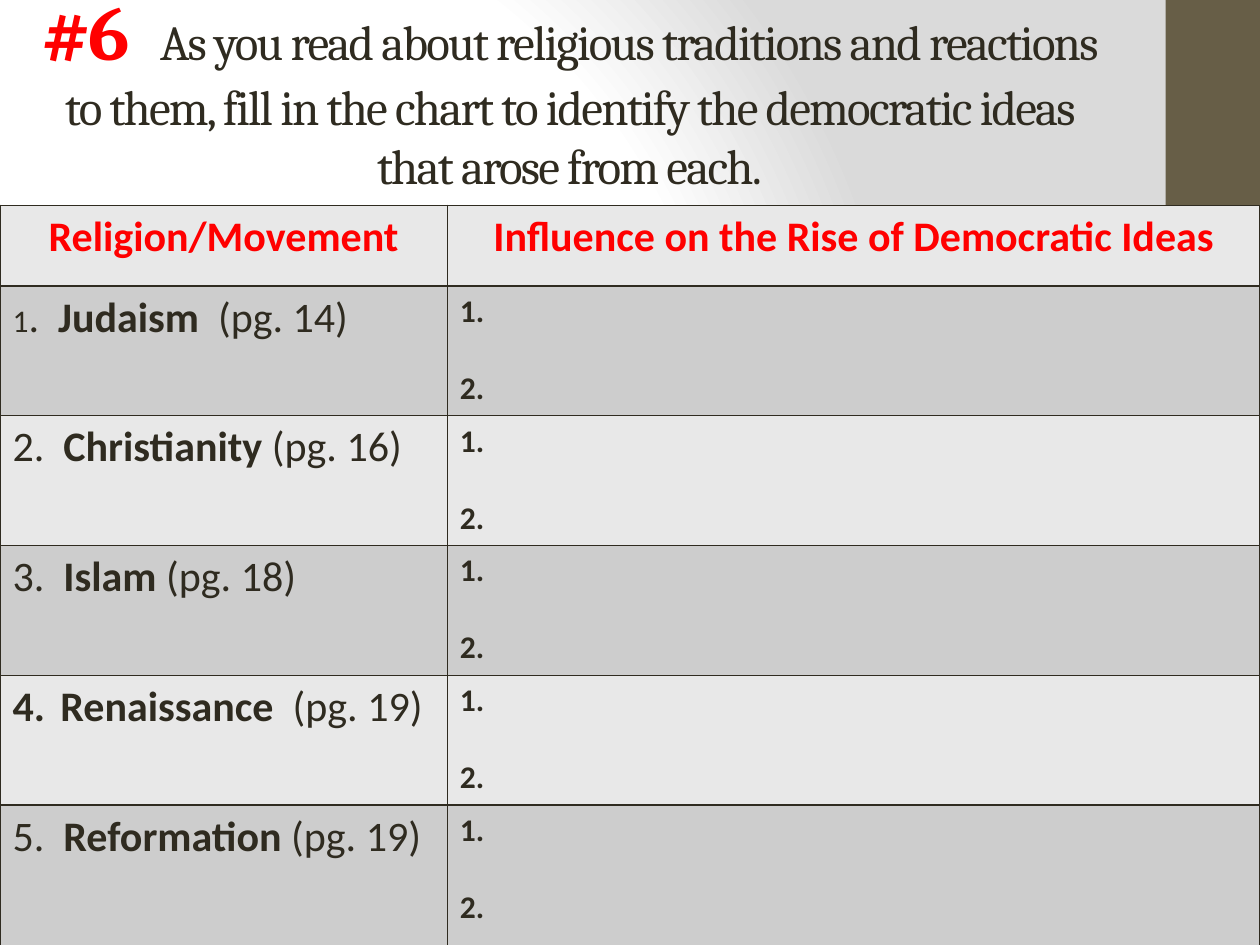
from pptx import Presentation, util as u
from pptx.dml.color import RGBColor
from pptx.enum import shapes, text
from pptx.oxml import parse_xml
from pptx.oxml.ns import nsdecls
from pptx.oxml.xmlchemy import OxmlElement

INK = RGBColor(0x2F, 0x2B, 0x20)
RED = RGBColor(0xFF, 0x00, 0x00)
OLIVE = RGBColor(0x67, 0x5E, 0x47)
LIGHT = RGBColor(0xE8, 0xE8, 0xE8)
DARK = RGBColor(0xCD, 0xCD, 0xCD)
STOPS = [(0, "FFFFFF"), (75, "FFFFFF"), (100, "DADADA")]

BODY = {"name": "Calibri", "size": u.Pt(24), "bold": False}
BOLD = BODY | {"bold": True}
SMALL = BODY | {"size": u.Pt(18)}
SMALL_BOLD = BOLD | {"size": u.Pt(18)}
TITLE = {"name": "Cambria", "size": u.Pt(28), "bold": False}
NUMBER = {"name": "Cambria", "size": u.Pt(44), "bold": True}

HEADINGS = ["Religion/Movement", "Influence on the Rise of Democratic Ideas"]
MOVEMENTS = [
    [("1", SMALL), (".  ", BODY), ("Judaism  ", BOLD), ("(pg. 14)", BODY)],
    [("2.  ", BODY), ("Christianity ", BOLD), ("(pg. 16)", BODY)],
    [("3.  ", BODY), ("Islam ", BOLD), ("(pg. 18)", BODY)],
    [("Renaissance  ", BOLD), ("(pg. 19)", BODY)],
    [("5. ", BODY), (" Reformation ", BOLD), ("(pg. 19)", BODY)],
]
AUTO_NUMBERED = 4
COLUMNS = [3.55, 6.45]
ROWS = [0.64, 1.03, 1.03, 1.03, 1.03, 1.13]


def add_run(p, words, style, color=INK):
    """Append a run with the given font values."""
    r = p.add_run()
    r.text = words
    for key, value in style.items():
        setattr(r.font, key, value)
    r.font.color.rgb = color
    return r


def paint_background(s):
    """Give the slide a circular grey gradient."""
    stops = "".join(
        f'<a:gs pos="{pos * 1000}"><a:srgbClr val="{val}"/></a:gs>' for pos, val in STOPS
    )
    s.element.cSld.insert(0, parse_xml(
        f'<p:bg {nsdecls("p", "a")}><p:bgPr><a:gradFill rotWithShape="1">'
        f'<a:gsLst>{stops}</a:gsLst><a:path path="circle">'
        '<a:fillToRect l="20000" t="50000" r="100000" b="50000"/></a:path>'
        '</a:gradFill><a:effectLst/></p:bgPr></p:bg>'
    ))


def add_sidebar(s, x, y, w, h):
    """Draw the olive band on the right."""
    sp = s.shapes.add_shape(shapes.MSO_SHAPE.RECTANGLE, x, y, w, h)
    sp.shadow.inherit = False
    sp.fill.solid()
    sp.fill.fore_color.rgb = OLIVE
    sp.line.fill.background()


def add_title(s, x, y, w, h):
    """Write the numbered instruction in its box."""
    tf = s.shapes.add_textbox(x, y, w, h).text_frame
    tf.word_wrap = True
    tf.vertical_anchor = text.MSO_ANCHOR.MIDDLE
    p = tf.paragraphs[0]
    p.alignment = text.PP_ALIGN.CENTER
    runs = [
        add_run(p, "#6  ", NUMBER, RED),
        add_run(p, "As you read about religious traditions and reactions to them, fill in "
                   "the chart to identify the democratic ideas that arose from each.", TITLE),
    ]
    for r in runs:
        r.font._element.set("spc", "-100")


def style_cell(cell, color):
    """Set the borders and the fill of a cell."""
    tc_pr = cell._tc.get_or_add_tcPr()
    for side in ("lnL", "lnR", "lnT", "lnB"):
        tc_pr.append(parse_xml(
            f'<a:{side} {nsdecls("a")} w="12700"><a:solidFill>'
            f'<a:srgbClr val="{INK}"/></a:solidFill></a:{side}>'
        ))
    cell.fill.solid()
    cell.fill.fore_color.rgb = color


def number_paragraph(p, start):
    """Turn a paragraph into an automatically numbered item."""
    p_pr = p._p.get_or_add_pPr()
    p_pr.set("marL", str(u.Inches(0.38)))
    p_pr.set("indent", str(u.Inches(-0.38)))
    bullet = OxmlElement("a:buAutoNum")
    bullet.set("type", "arabicPeriod")
    bullet.set("startAt", str(start))
    p_pr.append(bullet)


def add_chart_table(s, x, y, w, h):
    """Build the table of movements and their influences."""
    table = s.shapes.add_table(len(ROWS), len(COLUMNS), x, y, w, h).table
    for column, width in zip(table.columns, COLUMNS):
        column.width = u.Inches(width)
    for i, (row, height) in enumerate(zip(table.rows, ROWS)):
        row.height = u.Inches(height)
        for cell in row.cells:
            style_cell(cell, DARK if i % 2 else LIGHT)
    for cell, heading in zip(table.rows[0].cells, HEADINGS):
        p = cell.text_frame.paragraphs[0]
        p.alignment = text.PP_ALIGN.CENTER
        add_run(p, heading, BOLD, RED)
    for i, movement in enumerate(MOVEMENTS, 1):
        p = table.cell(i, 0).text_frame.paragraphs[0]
        if i == AUTO_NUMBERED:
            number_paragraph(p, i)
        for words, style in movement:
            add_run(p, words, style)
        tf = table.cell(i, 1).text_frame
        add_run(tf.paragraphs[0], "1.", SMALL_BOLD)
        p = tf.add_paragraph()
        p.space_before = u.Pt(22)
        add_run(p, "2.", SMALL_BOLD)


def main():
    """Build and save the slide."""
    prs = Presentation()
    prs.slide_width, prs.slide_height = u.Inches(10), u.Inches(7.5)
    s = prs.slides.add_slide(prs.slide_layouts[6])
    paint_background(s)
    add_sidebar(s, u.Inches(9.25), 0, u.Inches(0.75), prs.slide_height)
    add_title(s, u.Inches(0.21), 0, u.Inches(8.62), u.Inches(1.41))
    add_chart_table(s, 0, u.Inches(1.63), prs.slide_width, u.Inches(sum(ROWS)))
    prs.save("out.pptx")


if __name__ == "__main__":
    main()
